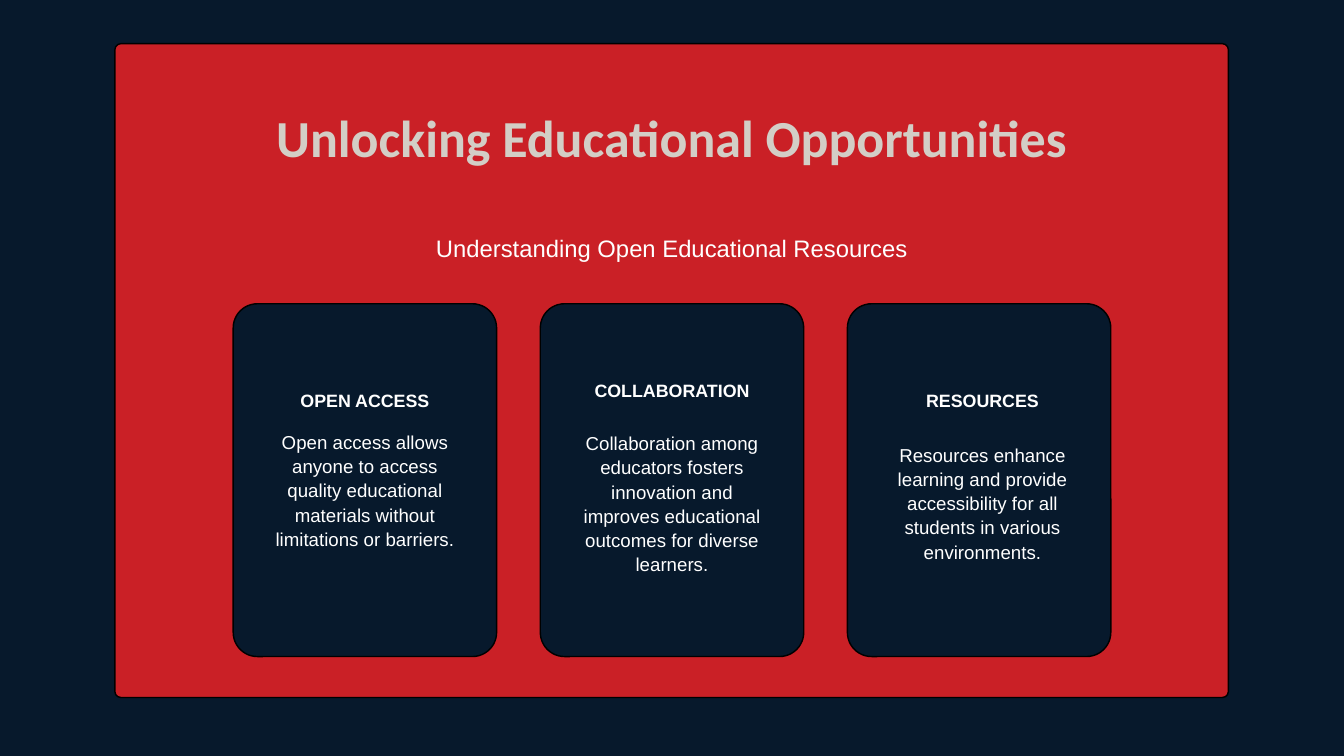
from dataclasses import dataclass

from pptx import Presentation
from pptx import util as u
from pptx.dml.color import RGBColor
from pptx.enum import shapes, text


@dataclass(frozen=True)
class Theme:
    navy: str = "07192C"
    red: str = "CA2026"
    sand: str = "D3CEC6"
    white: str = "FFFFFF"
    black: str = "000000"
    heading_font: str = "Calibri"
    body_font: str = "Arial"
    title: tuple = (55.7, 61.3)
    subtitle: tuple = (25.5, 33.1)
    label: tuple = (19.1, 22.9)
    body: tuple = (20, 26)
    outline: float = 1.5


class Deck:
    COLS, ROWS = 20, 11.25

    def __init__(self, theme):
        self.theme = theme
        self.prs = Presentation()
        self.prs.slide_width = u.Inches(20)
        self.prs.slide_height = u.Inches(11.25)
        self.s = None

    def add_slide(self):
        self.s = self.prs.slides.add_slide(self.prs.slide_layouts[0])
        fill = self.s.background.fill
        fill.solid()
        fill.fore_color.rgb = RGBColor.from_string(self.theme.navy)

    def box(self, col, row, cols, rows):
        x = self.prs.slide_width / self.COLS
        y = self.prs.slide_height / self.ROWS
        return [round(n) for n in (col * x, row * y, cols * x, rows * y)]

    def panel(self, place, color, radius):
        sp = self.s.shapes.add_shape(
            shapes.MSO_SHAPE.ROUNDED_RECTANGLE, *self.box(*place))
        sp.adjustments[0] = radius / min(place[2:])
        sp.shadow.inherit = False
        sp.fill.solid()
        sp.fill.fore_color.rgb = RGBColor.from_string(color)
        sp.line.color.rgb = RGBColor.from_string(self.theme.black)
        sp.line.width = u.Pt(self.theme.outline)

    def set_text(self, sp, words, style, font, color, bold=False):
        size, leading = style
        tf = sp.text_frame
        tf.word_wrap = True
        tf.auto_size = text.MSO_AUTO_SIZE.NONE
        tf.vertical_anchor = text.MSO_ANCHOR.TOP
        tf.margin_left = tf.margin_right = tf.margin_top = tf.margin_bottom = 0
        p = tf.paragraphs[0]
        p.alignment = text.PP_ALIGN.CENTER
        p.line_spacing = u.Pt(leading)
        p.space_before = u.Pt(0)
        r = p.add_run()
        r.text = words
        r.font.size = u.Pt(size)
        r.font.name = font
        r.font.bold = bold
        r.font.color.rgb = RGBColor.from_string(color)

    def placeholder(self, index, place, *style, **options):
        sp = self.s.placeholders[index]
        sp.left, sp.top, sp.width, sp.height = self.box(*place)
        self.s.shapes.element.append(sp.element)
        self.set_text(sp, *style, **options)

    def title(self, place, words):
        t = self.theme
        self.placeholder(0, place, words, t.title, t.heading_font, t.sand, bold=True)

    def subtitle(self, place, words):
        t = self.theme
        self.placeholder(1, place, words, t.subtitle, t.body_font, t.white)

    def text_box(self, place, words, style, bold=False):
        t = self.theme
        sp = self.s.shapes.add_textbox(*self.box(*place))
        self.set_text(sp, words, style, t.body_font, t.white, bold)

    def card(self, col, label, label_row, body, body_row, shift=0):
        t = self.theme
        width, body_width = 3.92, 2.78
        self.panel((col, 4.52, width, 5.25), t.navy, 0.36)
        self.text_box((col + shift, label_row, width, 0.31), label, t.label, bold=True)
        body_col = col + shift + (width - body_width) / 2
        self.text_box((body_col, body_row, body_width, 2.47), body, t.body)


CARDS = [
    ("OPEN ACCESS", 5.8,
     "Open access allows anyone to access quality educational materials "
     "without limitations or barriers.", 6.38, 0),
    ("COLLABORATION", 5.65,
     "Collaboration among educators fosters innovation and improves "
     "educational outcomes for diverse learners.", 6.4, 0),
    ("RESOURCES", 5.8,
     "Resources enhance learning and provide accessibility for all students "
     "in various environments.", 6.57, 0.05),
]


def main():
    deck = Deck(Theme())
    deck.add_slide()
    deck.panel((1.71, 0.65, 16.57, 9.73), deck.theme.red, 0.09)
    deck.subtitle((2.52, 3.45, 14.96, 0.45), "Understanding Open Educational Resources")
    deck.title((3.22, 1.64, 13.55, 1.73), "Unlocking Educational Opportunities")
    first, pitch = 3.47, 4.57
    for i, card in enumerate(CARDS):
        deck.card(first + i * pitch, *card)
    deck.prs.save("out.pptx")


if __name__ == "__main__":
    main()
